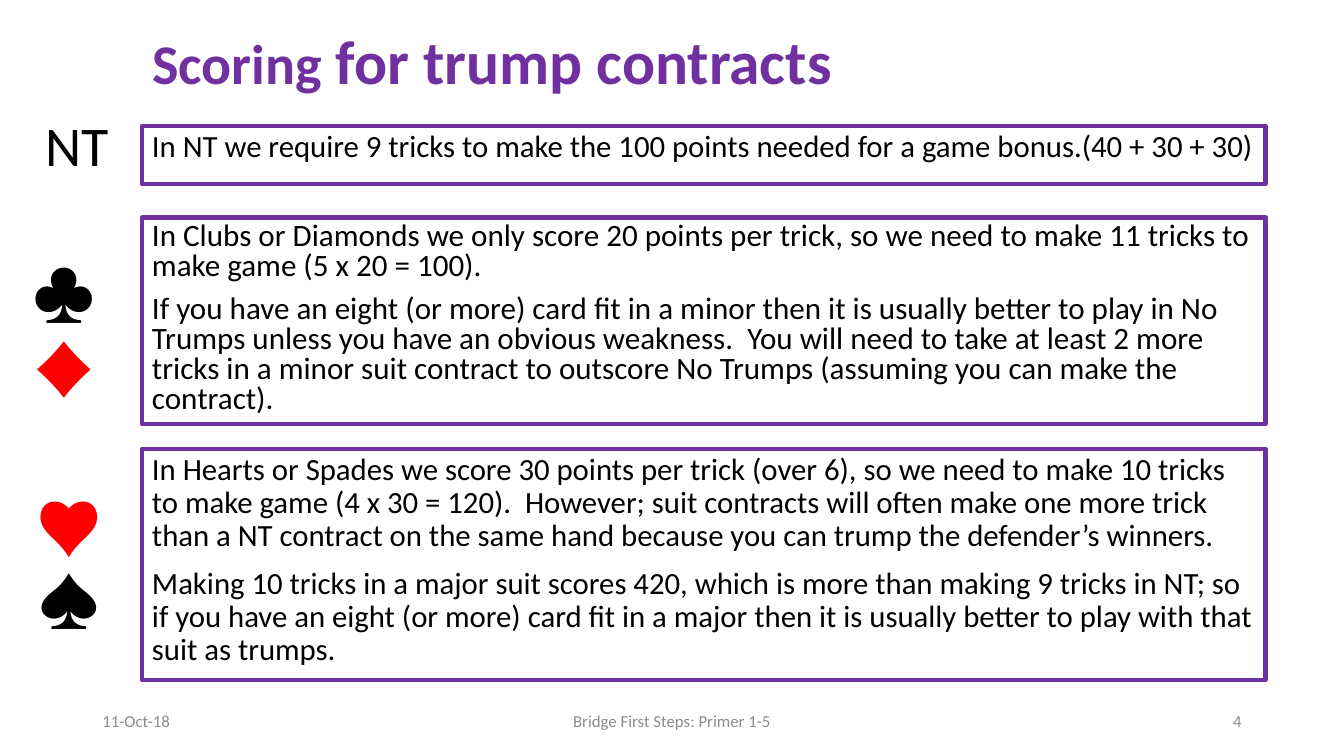
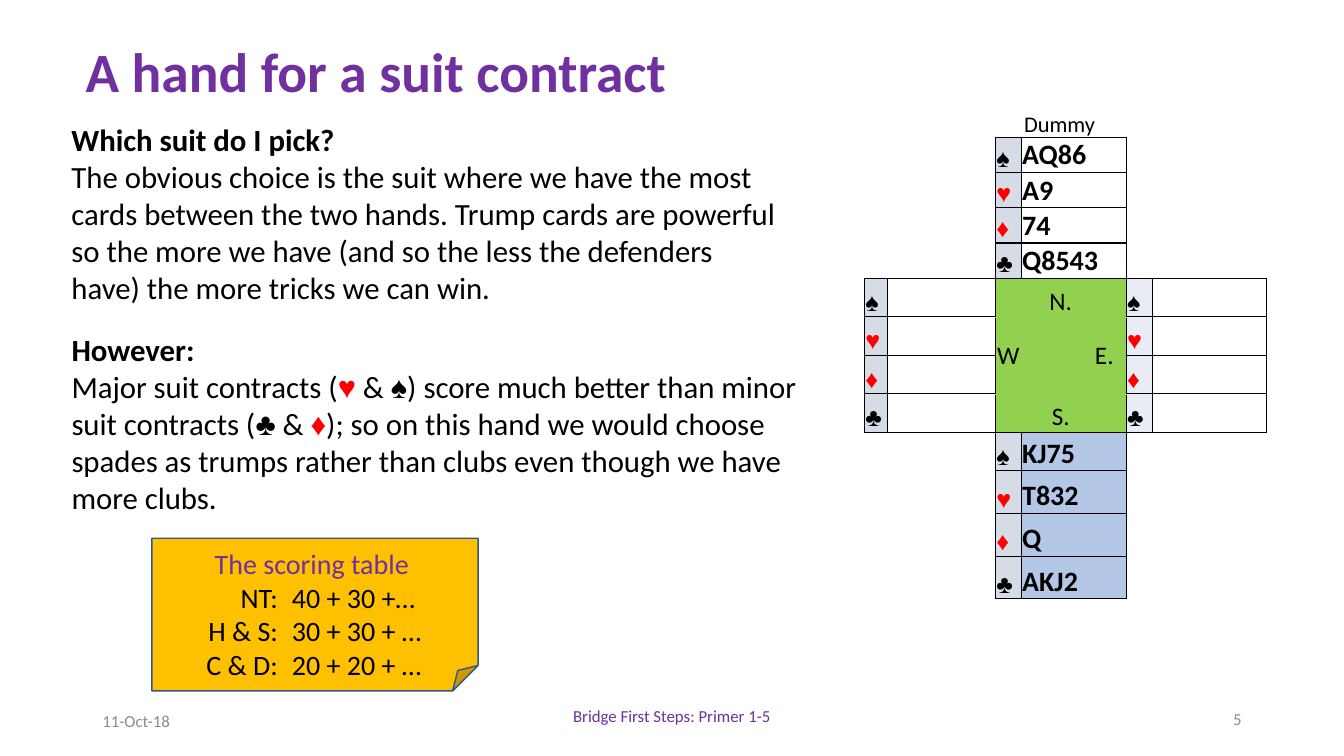
from itertools import groupby

from lxml.etree import SubElement
from pptx import Presentation
from pptx.dml.color import RGBColor
from pptx.enum.shapes import MSO_SHAPE
from pptx.enum.text import MSO_ANCHOR, MSO_AUTO_SIZE, PP_ALIGN
from pptx.oxml.ns import qn
from pptx.util import Pt

FONT, SUIT_FONT = "Calibri", "Arial"
PURPLE, BLACK, RED, GREY = "7030A0", "000000", "FF0000", "8C8C8C"
GREEN, AMBER, AMBER_LINE = "92D050", "FFC000", "325491"
SUIT_FILL, EAST_SUIT_FILL, SOUTH_FILL = "D6DCE5", "E9EBF5", "B4C7E7"
SUITS = {"♠": BLACK, "♥": RED, "♦": RED, "♣": BLACK}
NO_STYLE = "{2D5ABB26-0587-4C30-8999-92F81FD0307C}"


def rgb(value):
    return RGBColor.from_string(value)


def points(box):
    return [Pt(v) for v in box]


def style(p, size=None, color=BLACK, bold=False, align=PP_ALIGN.LEFT):
    p.alignment = align
    p.font.name, p.font.bold = FONT, bold
    p.font.color.rgb = rgb(color)
    if size:
        p.font.size = Pt(size)


def add_runs(p, text, suit_font=SUIT_FONT):
    """Write text, giving each suit symbol its own colour and font."""
    for color, chars in groupby(text, key=SUITS.get):
        r = p.add_run()
        r.text = "".join(chars)
        if color:
            r.font.name = suit_font
            r.font.color.rgb = rgb(color)


def paragraphs(tf, count):
    return [tf.paragraphs[0]] + [tf.add_paragraph() for _ in range(count - 1)]


def add_text(s, box, texts, size, color=BLACK, align=PP_ALIGN.LEFT,
             anchor=MSO_ANCHOR.TOP, suit_font=SUIT_FONT):
    tf = s.shapes.add_textbox(*points(box)).text_frame
    tf.word_wrap, tf.vertical_anchor = True, anchor
    for p, text in zip(paragraphs(tf, len(texts)), texts):
        style(p, size, color, align=align)
        add_runs(p, text, suit_font)
    return tf


def add_panel(s, shape, box, line, width, fill=None):
    sp = s.shapes.add_shape(shape, *points(box))
    sp.shadow.inherit = False
    if fill:
        sp.fill.solid()
        sp.fill.fore_color.rgb = rgb(fill)
    else:
        sp.fill.background()
    sp.line.color.rgb = rgb(line)
    sp.line.width = Pt(width)
    tf = sp.text_frame
    tf.word_wrap, tf.vertical_anchor = True, MSO_ANCHOR.TOP
    return tf


def titled_slide(prs, box, *parts):
    """Add a slide whose title is made of (text, size) parts."""
    s = prs.slides.add_slide(prs.slide_layouts[5])
    title = s.shapes.title
    title.left, title.top, title.width, title.height = points(box)
    tf = title.text_frame
    tf.auto_size, tf.vertical_anchor = MSO_AUTO_SIZE.NONE, MSO_ANCHOR.MIDDLE
    p = tf.paragraphs[0]
    style(p, color=PURPLE, bold=True)
    p.line_spacing = 0.9
    for text, size in parts:
        r = p.add_run()
        r.text = text
        r.font.size = Pt(size)
    return s


def add_footer(s, number, name_top=500, number_top=500, name_color=GREY):
    for x, y, w, text, color, align in (
            (66, 500, 216, "11-Oct-18", GREY, PP_ALIGN.LEFT),
            (318, name_top, 324, "Bridge First Steps: Primer 1-5", name_color, PP_ALIGN.CENTER),
            (678, number_top, 216, str(number), GREY, PP_ALIGN.RIGHT)):
        add_text(s, (x, y, w, 29), [text], 12, color, align, MSO_ANCHOR.MIDDLE)


def rule_box(s, top, height, texts, size=22, spacing=0.9):
    tf = add_panel(s, MSO_SHAPE.RECTANGLE, (101.5, top, 802.5, height), PURPLE, 3)
    for p, text in zip(paragraphs(tf, len(texts)), texts):
        style(p, size)
        p.line_spacing, p.space_before = spacing, Pt(10)
        add_runs(p, text)


def advice(s, box, heading, body):
    tf = add_text(s, box, [heading, body], 22)
    tf.paragraphs[0].font.bold = True


def scoring_note(s, box, heading, scores):
    tf = add_panel(s, MSO_SHAPE.FOLDED_CORNER, box, AMBER_LINE, 1, AMBER)
    tf.margin_top = Pt(6)
    first, *rest = paragraphs(tf, 1 + len(scores))
    style(first, 20, PURPLE, align=PP_ALIGN.CENTER)
    add_runs(first, heading)
    for p, (label, score) in zip(rest, scores):
        style(p, 20)
        add_runs(p, f"\t{label}\t{score}")
        pPr = p._p.get_or_add_pPr()
        tabs = pPr.makeelement(qn("a:tabLst"))
        for pos, align in ((83, "r"), (93, "l")):
            SubElement(tabs, qn("a:tab"), pos=str(Pt(pos)), algn=align)
        pPr.find(qn("a:defRPr")).addprevious(tabs)


def set_borders(cell, black_sides, other):
    """Draw the named sides in black and the rest as thin lines in another colour."""
    tcPr = cell._tc.get_or_add_tcPr()
    for side in "LRTB":
        color, width = (BLACK, 1) if side in black_sides else (other, 0.25)
        ln = SubElement(tcPr, qn(f"a:ln{side}"), w=str(Pt(width)))
        SubElement(SubElement(ln, qn("a:solidFill")), qn("a:srgbClr"), val=color)


def fill_cell(cell, text="", size=18, fill=None, bold=False, sides="LRTB",
              align=PP_ALIGN.LEFT, anchor=MSO_ANCHOR.BOTTOM):
    set_borders(cell, sides, fill)
    if fill:
        cell.fill.solid()
        cell.fill.fore_color.rgb = rgb(fill)
    cell.vertical_anchor = anchor
    p = cell.text_frame.paragraphs[0]
    style(p, size, bold=bold, align=align)
    add_runs(p, text)


def deal_diagram(s, left, top, north, south):
    """Draw the four hands around a compass, as rows of suit and cards."""
    widths = [15.5, 16.5, 77, 18.5, 75, 19] + [40.5] * 3
    heights = [33] + [25.2] * 4 + [27.5] * 5 + [30.5] * 3 + [22]
    frame = s.shapes.add_table(len(heights), len(widths),
                               *points((left, top, sum(widths), sum(heights))))
    table = frame.table
    table.first_row = table.horz_banding = False
    table._tbl.tblPr.find(qn("a:tableStyleId")).text = NO_STYLE
    for col, width in zip(table.columns, widths):
        col.width = Pt(width)
    for row, height in zip(table.rows, heights):
        row.height = Pt(height)
    for cell in table.iter_cells():
        cell.margin_left = cell.margin_right = cell.margin_top = Pt(0.7)
        cell.margin_bottom = 0
        style(cell.text_frame.paragraphs[0], 16)

    for row in range(5, 9):
        table.cell(row, 6).merge(table.cell(row, 7))
    blank = [""] * 4
    for row, col, hand, suit_fill, card_fill in (
            (1, 3, north, SUIT_FILL, None),
            (5, 1, blank, SUIT_FILL, None),
            (5, 5, blank, EAST_SUIT_FILL, None),
            (9, 3, south, SUIT_FILL, SOUTH_FILL)):
        for i, (suit, cards) in enumerate(zip(SUITS, hand)):
            fill_cell(table.cell(row + i, col), suit, fill=suit_fill)
            fill_cell(table.cell(row + i, col + 1), cards, 20, card_fill, True)

    mid, low = MSO_ANCHOR.MIDDLE, MSO_ANCHOR.BOTTOM
    for start, end, text, sides, align, anchor in (
            ((5, 3), (5, 4), "N.", "LRT", PP_ALIGN.CENTER, low),
            ((6, 3), (7, 3), "W", "L", PP_ALIGN.CENTER, mid),
            ((6, 4), (7, 4), "E.", "R", PP_ALIGN.RIGHT, mid),
            ((8, 3), (8, 4), "S.", "LRB", PP_ALIGN.CENTER, low)):
        cell = table.cell(*start)
        cell.merge(table.cell(*end))
        fill_cell(cell, text, fill=GREEN, sides=sides, align=align, anchor=anchor)
    table.cell(6, 4).margin_right = Pt(9)

    add_text(s, (left + 122.5, top + 10, 82, 27), ["Dummy"], 16)


def scoring_slide(prs):
    s = titled_slide(prs, (101.5, 16.5, 784, 59), ("Scoring", 40), (" for trump contracts", 44))
    add_text(s, (25.5, 75.5, 71, 55), ["NT"], 40)
    for x, y, suits in ((17, 176.5, "♣♦"), (20.5, 342.5, "♥♠")):
        add_text(s, (x, y, 81, 120), suits, 44, suit_font=FONT)
    rule_box(s, 90, 41.5, [
        "In NT we require 9 tricks to make the 100 points needed for a game bonus.(40 + 30 + 30)"])
    rule_box(s, 155.3, 147.7, [
        "In Clubs or Diamonds we only score 20 points per trick, so we need to make 11 tricks "
        "to make game (5 x 20 = 100).",
        "If you have an eight (or more) card fit in a minor then it is usually better to play "
        "in No Trumps unless you have an obvious weakness.  You will need to take at least 2 "
        "more tricks in a minor suit contract to outscore No Trumps (assuming you can make the "
        "contract)."], 22.2, 0.8)
    rule_box(s, 320.5, 165, [
        "In Hearts or Spades we score 30 points per trick (over 6), so we need to make 10 "
        "tricks to make game (4 x 30 = 120).  However; suit contracts will often make one more "
        "trick than a NT contract on the same hand because you can trump the defender’s winners.",
        "Making 10 tricks in a major suit scores 420, which is more than making 9 tricks in NT; "
        "so if you have an eight (or more) card fit in a major then it is usually better to "
        "play with that suit as trumps."])
    add_footer(s, 4)


def hand_slide(prs):
    s = titled_slide(prs, (54, 29, 840, 49), ("A hand for a suit contract", 39.6))
    advice(s, (44, 83, 523.5, 141), "Which suit do I pick?",
           "The obvious choice is the suit where we have the most cards between the two hands. "
           "Trump cards are powerful so the more we have (and so the less the defenders have) "
           "the more tricks we can win.")
    advice(s, (44, 233, 564, 141), "However:",
           "Major suit contracts (♥ & ♠) score much better than minor suit contracts (♣ & ♦); "
           "so on this hand we would choose spades as trumps rather than clubs even though we "
           "have more clubs.")
    scoring_note(s, (108.5, 384.5, 233, 109), "The scoring table ", [
        ("NT:", "40 + 30 +…"), ("H & S:", "30 + 30 + …"), ("C & D:", "20 + 20 + …")])
    deal_diagram(s, 602, 65, ["AQ86", "A9", "74", "Q8543"], ["KJ75", "T832", "Q", "AKJ2"])
    add_footer(s, 5, 497, 499, PURPLE)


def main():
    prs = Presentation()
    prs.slide_width, prs.slide_height = Pt(960), Pt(540)
    scoring_slide(prs)
    hand_slide(prs)
    prs.save("out.pptx")


if __name__ == "__main__":
    main()
